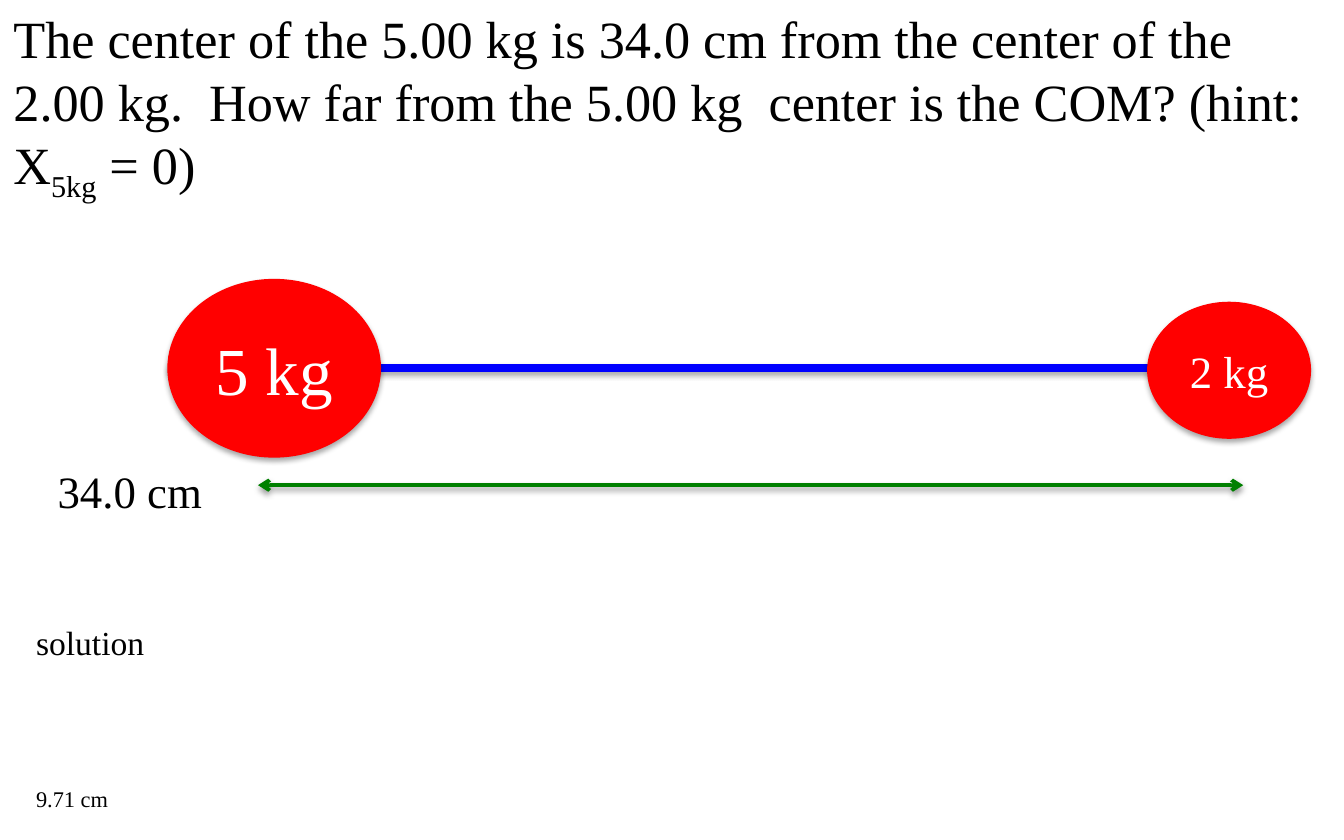
import pptx
import pptx.dml.color
import pptx.enum.shapes
import pptx.enum.text
import pptx.oxml
import pptx.oxml.ns
import pptx.util

Inches = pptx.util.Inches
Pt = pptx.util.Pt
RGBColor = pptx.dml.color.RGBColor
PP_ALIGN = pptx.enum.text.PP_ALIGN
MSO_ANCHOR = pptx.enum.text.MSO_ANCHOR

BLACK = RGBColor(0, 0, 0)
WHITE = RGBColor(255, 255, 255)
RED = RGBColor(255, 0, 0)
BLUE = RGBColor(0, 0, 255)
GREEN = RGBColor(0, 128, 0)
FONT = "Times New Roman"


def style_paragraph(p, size, color=BLACK, align=PP_ALIGN.LEFT):
    p.alignment = align
    p.font.name = FONT
    p.font.size = Pt(size)
    p.font.color.rgb = color


def add_shadow(s, distance, opacity):
    """Give a shape or connector a soft shadow falling straight down."""
    s._element.spPr.append(pptx.oxml.parse_xml(
        f'<a:effectLst {pptx.oxml.ns.nsdecls("a")}>'
        f'<a:outerShdw blurRad="{Pt(3.1)}" dist="{Pt(distance)}" dir="5400000" rotWithShape="0">'
        f'<a:srgbClr val="000000"><a:alpha val="{opacity * 1000}"/></a:srgbClr>'
        '</a:outerShdw></a:effectLst>'))


def add_question(slide, left, top, width, height):
    s = slide.shapes.title
    s.left, s.top, s.width, s.height = map(Inches, (left, top, width, height))
    tf = s.text_frame
    tf.word_wrap = True
    tf.auto_size = pptx.enum.text.MSO_AUTO_SIZE.NONE
    tf.vertical_anchor = MSO_ANCHOR.TOP
    p = tf.paragraphs[0]
    style_paragraph(p, 28)
    p.add_run().text = ("The center of the 5.00 kg is 34.0 cm from the center of the 2.00 kg.  "
                        "How far from the 5.00 kg  center is the COM? (hint: X")
    subscript = p.add_run()
    subscript.text = "5kg"
    subscript._r.get_or_add_rPr().set("baseline", "-25000")
    p.add_run().text = " = 0)"


def add_label(slide, text, size, left, top, width, height, wrap=False):
    s = slide.shapes.add_textbox(*map(Inches, (left, top, width, height)))
    tf = s.text_frame
    tf.word_wrap = wrap
    tf.text = text
    style_paragraph(tf.paragraphs[0], size)


def add_mass(slide, text, size, left, top, width, height):
    s = slide.shapes.add_shape(pptx.enum.shapes.MSO_SHAPE.OVAL,
                               *map(Inches, (left, top, width, height)))
    s.fill.solid()
    s.fill.fore_color.rgb = RED
    s.line.color.rgb = RED
    s.line.width = Pt(0.75)
    add_shadow(s, 1.8, 35)
    tf = s.text_frame
    tf.vertical_anchor = MSO_ANCHOR.MIDDLE
    tf.text = text
    style_paragraph(tf.paragraphs[0], size, WHITE, PP_ALIGN.CENTER)


def add_line(slide, start, end, y, color, weight, arrows=False):
    s = slide.shapes.add_connector(pptx.enum.shapes.MSO_CONNECTOR.STRAIGHT,
                                   *map(Inches, (start, y, end, y)))
    s.line.color.rgb = color
    s.line.width = Pt(weight)
    if arrows:
        ln = s.line._get_or_add_ln()
        for tag in ("headEnd", "tailEnd"):
            ln.append(pptx.oxml.parse_xml(
                f'<a:{tag} {pptx.oxml.ns.nsdecls("a")} type="arrow"/>'))
    add_shadow(s, 1.6, 38)


def add_dumbbell(slide, left, top, width, height):
    """Draw the two masses on their rod, with the distance arrow below."""
    axis = top + 0.66
    add_line(slide, left, left + width - 0.75, axis, BLUE, 4)
    add_mass(slide, "5 kg", 36, left, top, 1.58, 1.32)
    add_mass(slide, "2 kg", 24, left + width - 1.21, top + 0.17, 1.21, 1.01)
    add_line(slide, left + 0.67, left + width - 0.5, top + height, GREEN, 2, arrows=True)


def main():
    prs = pptx.Presentation()
    prs.slide_width, prs.slide_height = Inches(10), Inches(6.25)
    slide = prs.slides.add_slide(prs.slide_layouts[5])
    add_question(slide, 0, 0, 10, 1.51)
    add_label(slide, "solution", 18, 0.17, 4.58, 9.5, 0.4, wrap=True)
    add_label(slide, "9.71 cm", 12, 0.17, 5.79, 0.74, 0.3)
    add_dumbbell(slide, 1.25, 2.08, 8.5, 1.53)
    add_label(slide, "34.0 cm", 24, 0.33, 3.4, 1.29, 0.5)
    prs.save("out.pptx")


if __name__ == "__main__":
    main()
